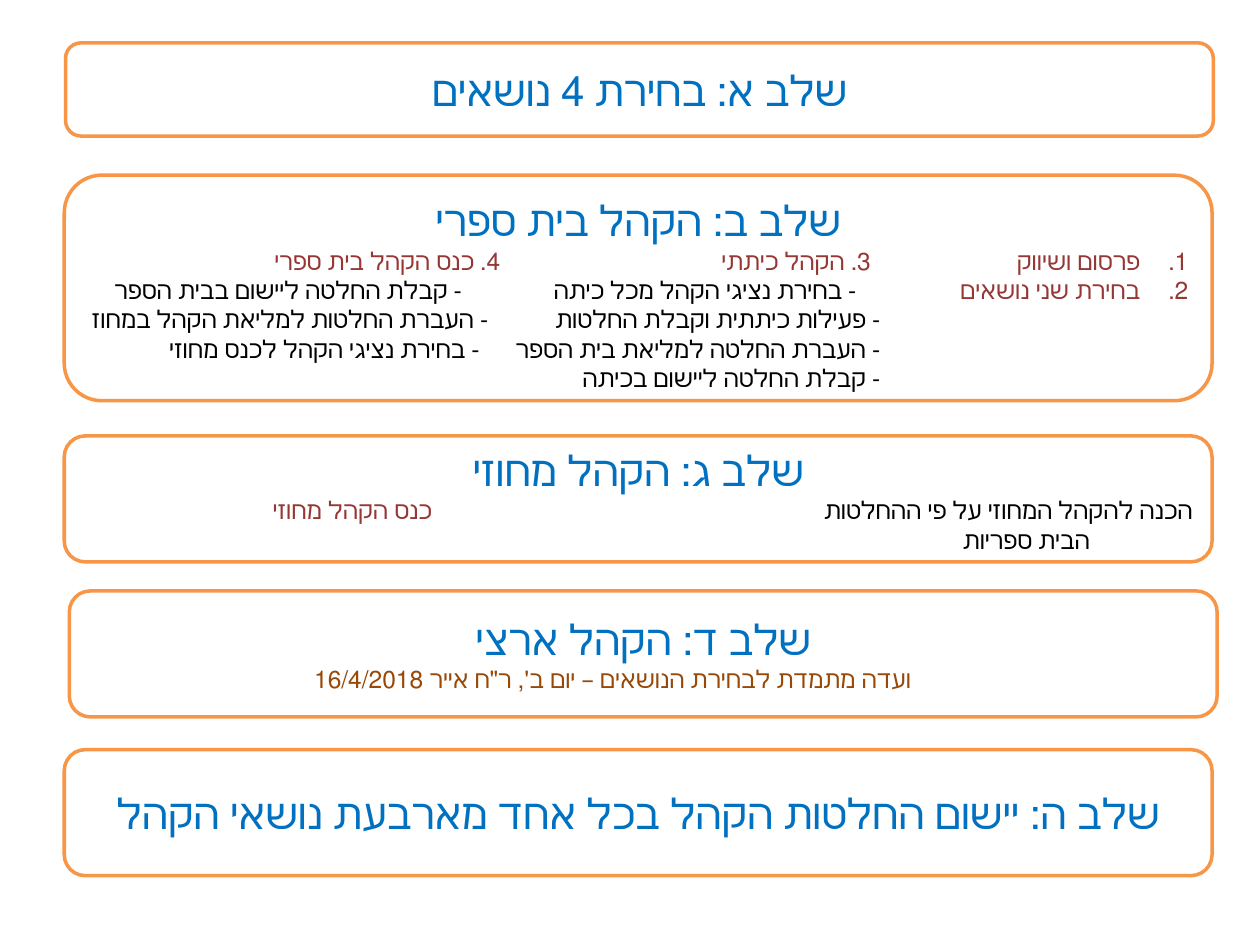
from lxml.etree import SubElement
from pptx import Presentation
from pptx.dml.color import RGBColor
from pptx.enum.shapes import MSO_SHAPE
from pptx.enum.text import MSO_ANCHOR, PP_ALIGN
from pptx.oxml.ns import qn
from pptx.util import Inches, Pt

BLUE, RED, BROWN, BLACK = "0070C0", "953735", "984807", "000000"
ORANGE, WHITE = "F79646", "FFFFFF"
HEAD = {"name": "Calibri", "size": Pt(24)}
BODY = {"name": "Calibri", "size": Pt(14)}
LEFT, WIDTH = 0.51, 9.11


def color(code):
    return RGBColor.from_string(code)


class Deck:
    def __init__(self):
        self.prs = Presentation()
        self.prs.slide_width = Inches(10)
        self.prs.slide_height = Inches(7.5)
        self.slide = self.prs.slides.add_slide(self.prs.slide_layouts[6])

    def line(self, para, text, style, ink, align, indent=0, listed=False):
        """Fill a right-to-left paragraph; indent is from its right edge."""
        props = para._p.get_or_add_pPr()
        props.set("rtl", "1")
        if indent:
            props.set("marL", str(Inches(indent)))
        if listed:
            props.set("indent", str(-Inches(indent)))
            SubElement(props, qn("a:buAutoNum"), type="arabicPeriod")
        para.alignment = align
        run = para.add_run()
        run.text = text
        for name, value in style.items():
            setattr(run.font, name, value)
        run.font.color.rgb = color(ink)

    def stage(self, left, top, height, title, inset=None):
        """Draw a stage frame; an inset puts its title at the top."""
        box = self.slide.shapes.add_shape(
            MSO_SHAPE.ROUNDED_RECTANGLE,
            Inches(left), Inches(top), Inches(WIDTH), Inches(height))
        box.shadow.inherit = False
        box.fill.solid()
        box.fill.fore_color.rgb = color(WHITE)
        box.line.color.rgb = color(ORANGE)
        box.line.width = Pt(2)
        frame = box.text_frame
        frame.word_wrap = True
        frame.vertical_anchor = MSO_ANCHOR.MIDDLE
        if inset is not None:
            frame.vertical_anchor = MSO_ANCHOR.TOP
            frame.margin_top = Inches(inset)
        self.line(frame.paragraphs[0], title, HEAD, BLUE, PP_ALIGN.CENTER)
        return frame

    def column(self, left, right, top, lines, listed=False):
        """Add right-aligned lines of (text, colour, indent)."""
        box = self.slide.shapes.add_textbox(
            Inches(left), Inches(top), Inches(right - left),
            Inches(0.24 * len(lines)))
        frame = box.text_frame
        frame.word_wrap = True
        for side in ("left", "right", "top", "bottom"):
            setattr(frame, f"margin_{side}", 0)
        for i, (text, ink, indent) in enumerate(lines):
            para = frame.add_paragraph() if i else frame.paragraphs[0]
            self.line(para, text, BODY, ink, PP_ALIGN.RIGHT, indent, listed)


def main():
    deck = Deck()
    deck.stage(0.52, 0.34, 0.74, "שלב א: בחירת 4 נושאים")

    deck.stage(LEFT, 1.39, 1.79, "שלב ב: הקהל בית ספרי", 0.07)
    top = 1.95
    deck.column(7.3, 9.43, top, [
        ("פרסום ושיווק", RED, 0.38),
        ("בחירת שני נושאים", RED, 0.38),
    ], listed=True)
    deck.column(4, 6.99, top, [
        ("3. הקהל כיתתי", RED, 0.08),
        ("- בחירת נציגי הקהל מכל כיתה", BLACK, 0.19),
        ("- פעילות כיתתית וקבלת החלטות", BLACK, 0),
        ("- העברת החלטה למליאת בית הספר", BLACK, 0),
        ("- קבלת החלטה ליישום בכיתה", BLACK, 0),
    ])
    deck.column(0.6, 3.97, top, [
        ("4. כנס הקהל בית ספרי", RED, 0),
        ("- קבלת החלטה ליישום בבית הספר", BLACK, 0.3),
        ("- העברת החלטות למליאת הקהל במחוז", BLACK, 0.09),
        ("- בחירת נציגי הקהל לכנס מחוזי", BLACK, 0.16),
    ])

    deck.stage(LEFT, 3.46, 1, "שלב ג: הקהל מחוזי", 0.02)
    top = 3.93
    deck.column(6, 9.47, top, [
        ("הכנה להקהל המחוזי על פי ההחלטות", BLACK, 0),
        ("הבית ספריות", BLACK, 0.82),
    ])
    deck.column(1.5, 3.43, top, [("כנס הקהל מחוזי", RED, 0)])

    frame = deck.stage(0.55, 4.69, 1, "שלב ד: הקהל ארצי")
    deck.line(frame.add_paragraph(),
              "ועדה מתמדת לבחירת הנושאים – יום ב', ר\"ח אייר 16/4/2018",
              BODY, BROWN, PP_ALIGN.CENTER, 0.48)

    deck.stage(LEFT, 5.95, 1,
               "שלב ה: יישום החלטות הקהל בכל אחד מארבעת נושאי הקהל")
    deck.prs.save("out.pptx")


if __name__ == "__main__":
    main()
